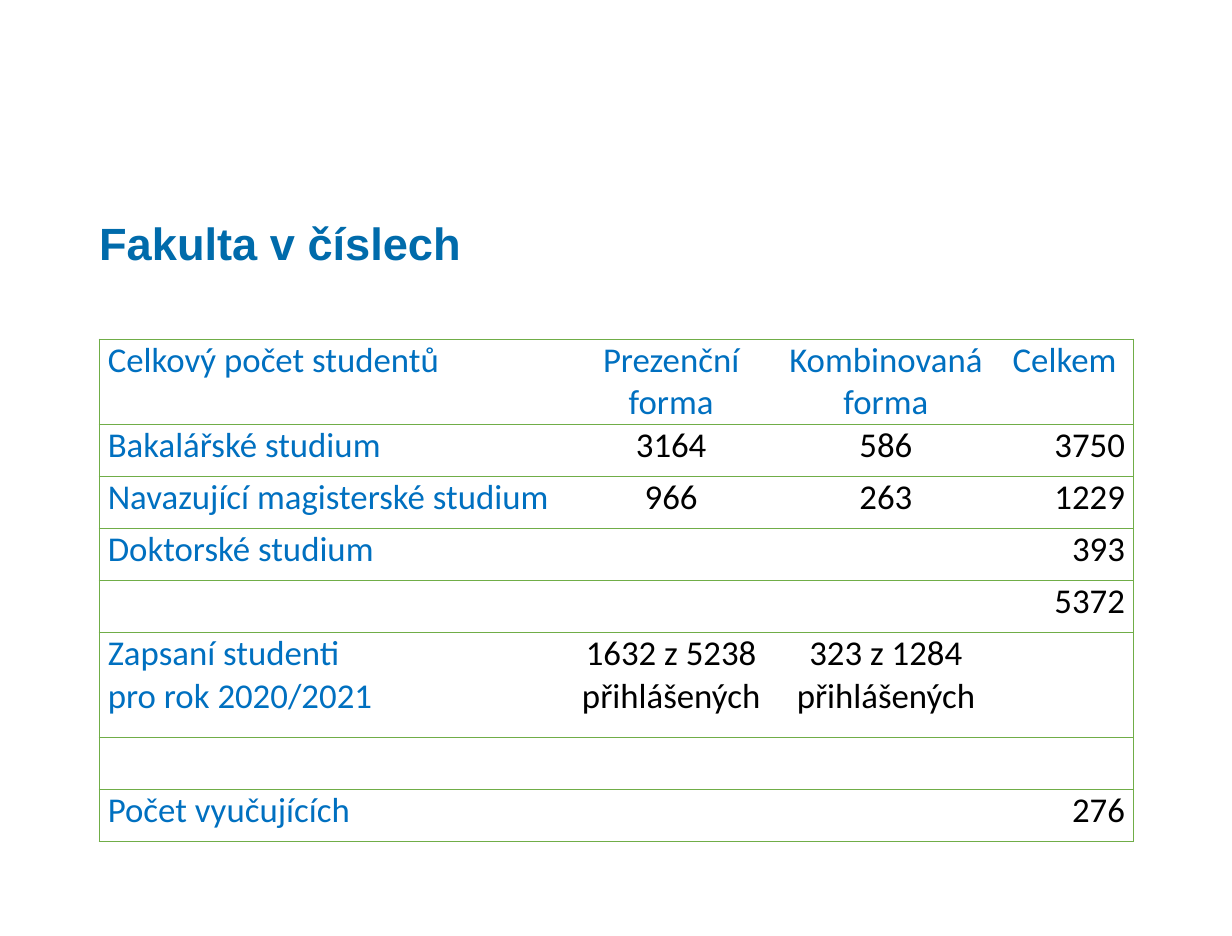
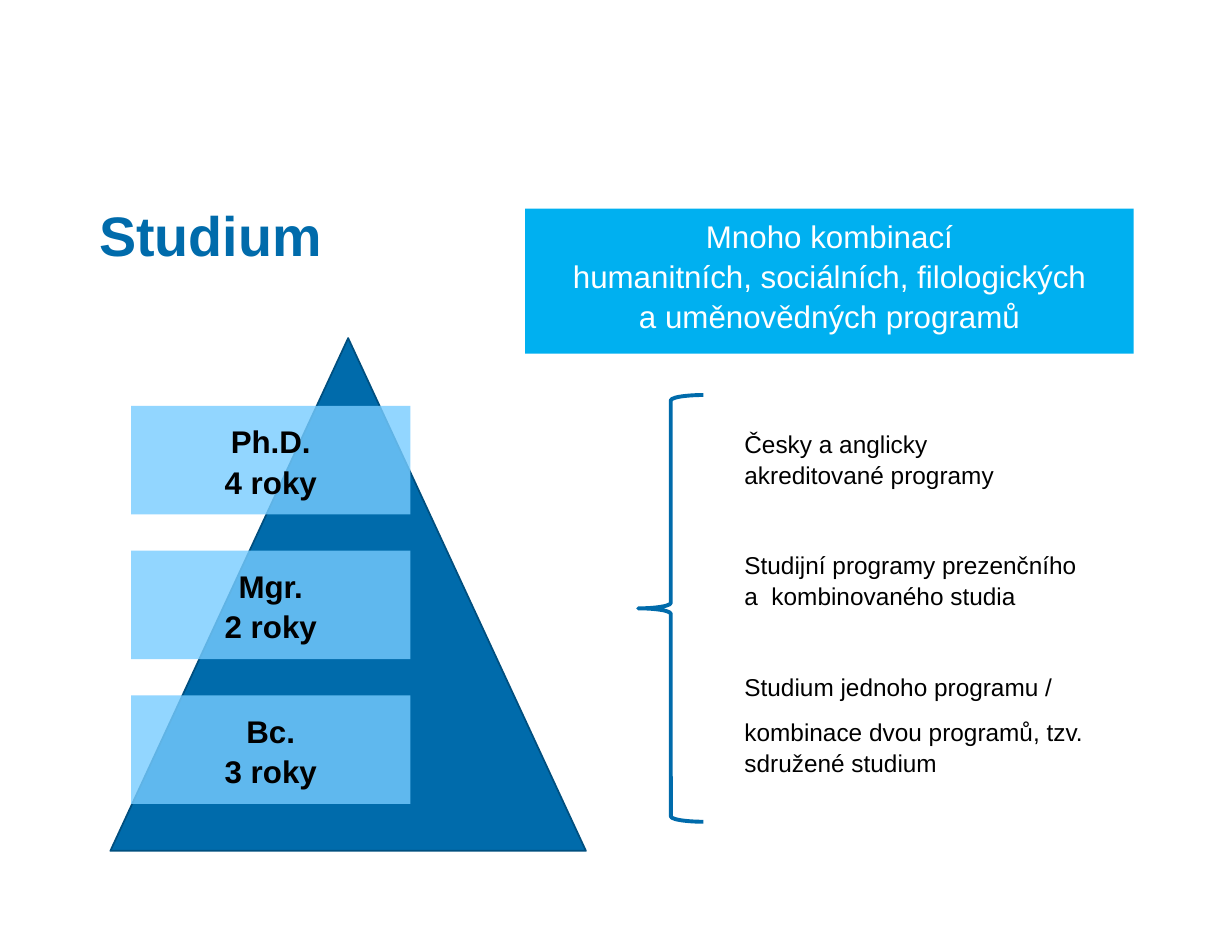
import pptx
import pptx.dml.color
import pptx.enum.shapes
import pptx.enum.text
import pptx.oxml.ns
import pptx.util
from lxml import etree

Pt = pptx.util.Pt
ALIGN = pptx.enum.text.PP_ALIGN
ANCHOR = pptx.enum.text.MSO_ANCHOR
SHAPE = pptx.enum.shapes.MSO_SHAPE
qn = pptx.oxml.ns.qn

COLORS = {
    "brand": "006BAB",
    "outline": "004F7F",
    "label": "77CCFF",
    "banner": "00B0F0",
    "heading": "0070C0",
    "border": "70AD47",
    "black": "000000",
    "white": "FFFFFF",
}
LEFT = 57
TITLE_ONLY = 5

COLUMN_WIDTHS = [268.5, 121, 126, 79.5]
COLUMN_ALIGNS = [ALIGN.LEFT, ALIGN.CENTER, ALIGN.CENTER, ALIGN.RIGHT]
ROW_HEIGHT = 30
ROW_HEIGHTS = {0: 49, 5: 2 * ROW_HEIGHT}
STUDENT_ROWS = [
    ["Celkový počet studentů", "Prezenční\nforma", "Kombinovaná forma", "Celkem"],
    ["Bakalářské studium", "3164", "586", "3750"],
    ["Navazující magisterské studium", "966", "263", "1229"],
    ["Doktorské studium", "", "", "393"],
    ["", "", "", "5372"],
    ["Zapsaní studenti\npro rok 2020/2021", "1632 z 5238 přihlášených",
     "323 z 1284 přihlášených", ""],
    ["", "", "", ""],
    ["Počet vyučujících", "", "", "276"],
]
DEGREES = ["Ph.D.\n4 roky", "Mgr.\n2 roky", "Bc.\n3 roky"]
# Each paragraph with the space after it
PROGRAMMES = [
    ("Česky a anglicky\nakreditované programy", 34),
    ("Studijní programy prezenčního\na  kombinovaného studia", 34),
    ("Studium jednoho programu /", 8),
    ("kombinace dvou programů, tzv. sdružené studium", 8),
]


def rgb(name):
    return pptx.dml.color.RGBColor.from_string(COLORS[name])


def format_paragraph(paragraph, size, color, font="Arial", bold=False,
                     align=ALIGN.LEFT, line_spacing=None):
    paragraph.alignment = align
    paragraph.line_spacing = line_spacing
    for run in paragraph.runs:
        run.font.name = font
        run.font.size = Pt(size)
        run.font.bold = bold
        run.font.color.rgb = rgb(color)


def set_title(slide, text, top, width, size):
    title = slide.shapes.title
    title.left, title.top, title.width, title.height = Pt(LEFT), Pt(top), Pt(width), Pt(59)
    frame = title.text_frame
    frame.text = text
    frame.vertical_anchor = ANCHOR.TOP
    frame.margin_left = frame.margin_right = frame.margin_top = frame.margin_bottom = 0
    format_paragraph(frame.paragraphs[0], size, "brand", bold=True, line_spacing=0.9)


def add_shape(slide, kind, box, fill=None, line=None, line_width=1):
    shape = slide.shapes.add_shape(kind, *[Pt(length) for length in box])
    shape.shadow.inherit = False
    if fill:
        shape.fill.solid()
        shape.fill.fore_color.rgb = rgb(fill)
    else:
        shape.fill.background()
    if line:
        shape.line.color.rgb = rgb(line)
        shape.line.width = Pt(line_width)
    else:
        shape.line.fill.background()
    return shape


def add_text_panel(slide, box, text, fill, color, anchor, bold=False):
    """Add a filled rectangle with one centred paragraph; newlines break its lines."""
    panel = add_shape(slide, SHAPE.RECTANGLE, box, fill)
    panel.text_frame.word_wrap = True
    panel.text_frame.vertical_anchor = anchor
    paragraph = panel.text_frame.paragraphs[0]
    paragraph.text = text
    format_paragraph(paragraph, 18, color, bold=bold, align=ALIGN.CENTER, line_spacing=1.07)
    return panel


def set_opacity(shape, percent):
    color = shape.fill._xPr.find(".//" + qn("a:srgbClr"))
    etree.SubElement(color, qn("a:alpha"), val=str(percent * 1000))


def set_borders(cell, visible_sides):
    """Draw the given sides (of L, R, T, B) and hide the others."""
    properties = cell._tc.get_or_add_tcPr()
    for side in "LRTB":
        line = etree.SubElement(properties, qn("a:ln" + side), w=str(Pt(0.5)))
        if side in visible_sides:
            fill = etree.SubElement(line, qn("a:solidFill"))
            etree.SubElement(fill, qn("a:srgbClr"), val=COLORS["border"])
        else:
            etree.SubElement(line, qn("a:noFill"))


def add_student_table(slide):
    heights = [ROW_HEIGHTS.get(index, ROW_HEIGHT) for index in range(len(STUDENT_ROWS))]
    table = slide.shapes.add_table(
        len(heights), len(COLUMN_WIDTHS), Pt(LEFT), Pt(195),
        Pt(sum(COLUMN_WIDTHS)), Pt(sum(heights))).table
    table.first_row = table.horz_banding = False
    for column, width in zip(table.columns, COLUMN_WIDTHS):
        column.width = Pt(width)
    for row, height in zip(table.rows, heights):
        row.height = Pt(height)
    outer_sides = {0: "L", len(COLUMN_WIDTHS) - 1: "R"}
    for row_index, texts in enumerate(STUDENT_ROWS):
        for column_index, text in enumerate(texts):
            cell = table.cell(row_index, column_index)
            cell.margin_left = cell.margin_right = Pt(5)
            cell.margin_top = cell.margin_bottom = 0
            set_borders(cell, "TB" + outer_sides.get(column_index, ""))
            cell.fill.background()
            cell.text_frame.text = text
            is_header = row_index == 0
            color = "heading" if is_header or column_index == 0 else "black"
            align = COLUMN_ALIGNS[column_index]
            if is_header and column_index:
                align = ALIGN.CENTER
            for paragraph in cell.text_frame.paragraphs:
                format_paragraph(paragraph, 20, color, font="Calibri", align=align)


def add_degree_pyramid(slide):
    add_shape(slide, SHAPE.ISOSCELES_TRIANGLE, (63.5, 194.5, 273.5, 295), "brand", "outline")
    for index, degree in enumerate(DEGREES):
        box = (75.5, 233.5 + 83.25 * index, 160.5, 62.5)
        label = add_text_panel(slide, box, degree, "label", "black", ANCHOR.MIDDLE, bold=True)
        set_opacity(label, 80)


def add_programme_list(slide):
    add_shape(slide, SHAPE.LEFT_BRACE, (367, 227.25, 37.5, 245.5), line="brand", line_width=2.25)
    frame = slide.shapes.add_textbox(Pt(421), Pt(242), Pt(237), Pt(259)).text_frame
    frame.word_wrap = True
    for index, (text, space_after) in enumerate(PROGRAMMES):
        paragraph = frame.add_paragraph() if index else frame.paragraphs[0]
        paragraph.text = text
        paragraph.space_after = Pt(space_after)
        format_paragraph(paragraph, 14, "black", line_spacing=1.07)


def main():
    presentation = pptx.Presentation()
    presentation.slide_width, presentation.slide_height = Pt(708.5), Pt(538.5)
    layout = presentation.slide_layouts[TITLE_ONLY]

    numbers_slide = presentation.slides.add_slide(layout)
    set_title(numbers_slide, "Fakulta v číslech", 127.5, 595, 26)
    add_student_table(numbers_slide)

    study_slide = presentation.slides.add_slide(layout)
    set_title(study_slide, "Studium", 120, 235, 32)
    add_degree_pyramid(study_slide)
    add_programme_list(study_slide)
    add_text_panel(
        study_slide, (302, 120, 350, 83.5),
        "Mnoho kombinací\nhumanitních, sociálních, filologických\na uměnovědných programů",
        "banner", "white", ANCHOR.TOP)

    presentation.save("out.pptx")


if __name__ == "__main__":
    main()
